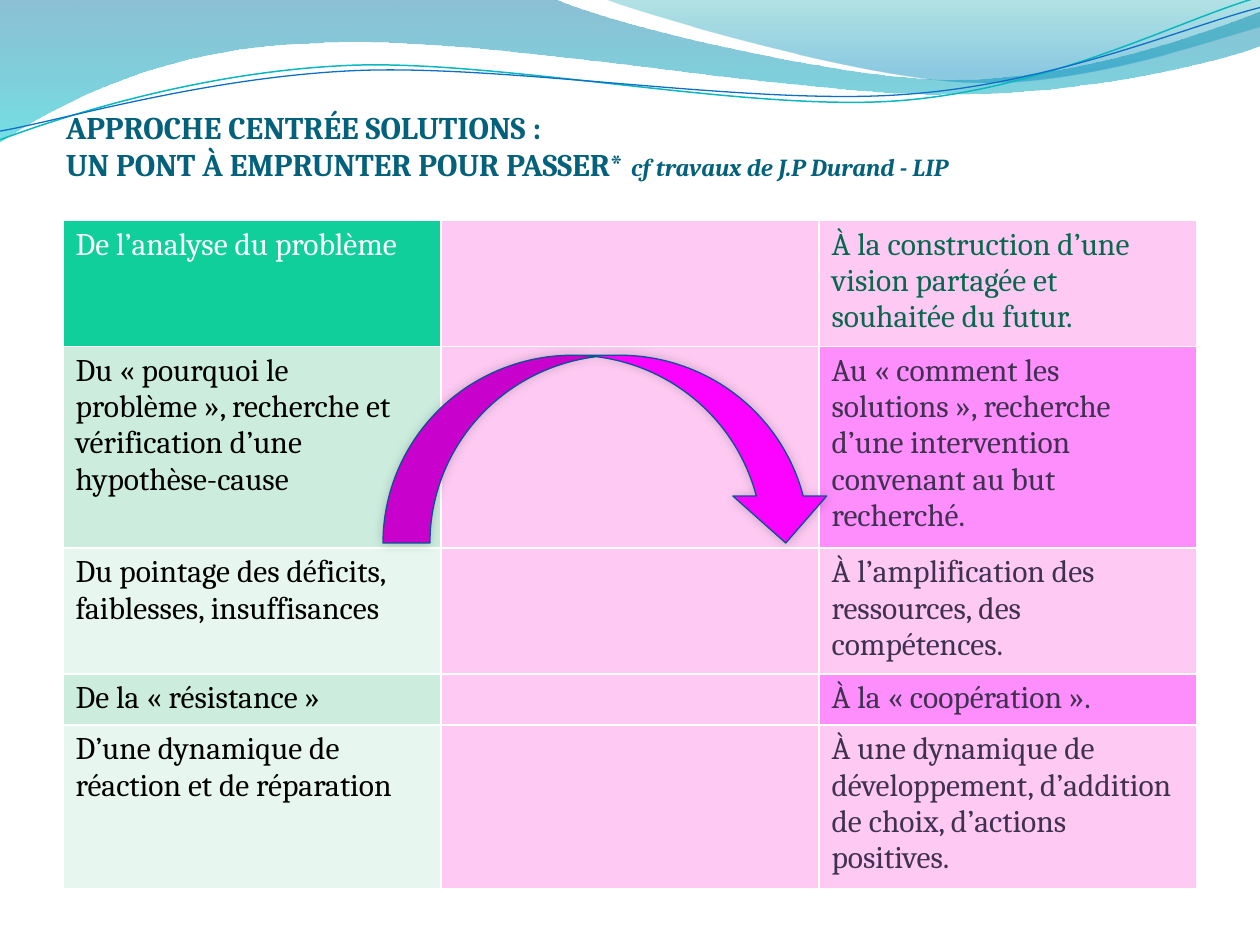
"""Build a slide comparing problem analysis with a solution-centred approach."""
import pptx
import pptx.util
import pptx.oxml
import pptx.oxml.ns
import pptx.dml.color
import pptx.enum.shapes
import pptx.enum.text

Pt = pptx.util.Pt
FONT = "Cambria"
HARD_SPACE = chr(160)
COLORS = {
    "title": "04617B", "white": "FFFFFF", "black": "000000",
    "green": "10CF9B", "mint": "CCEDDE", "pale mint": "E7F6EF",
    "pink": "FECAF3", "orchid": "FD8EFB", "dark green": "08684E",
    "plum": "403152", "arrow": "FC02FF", "arrow line": "095295",
    "teal line": "0AB8BF", "blue line": "0F6FC6",
    "deep blue": "0074A1", "cyan": "00C6CF", "sea": "00A1A9", "sky": "008BBF",
}
TITLE_LINES = [
    [("APPROCHE CENTRÉE SOLUTIONS : ", 18, False)],
    [("UN PONT À EMPRUNTER POUR PASSER* ", 18, False),
     ("cf travaux de J.P Durand - LIP", 14, True)],
]
ROWS = [
    (72, ("De l’analyse du problème", "white", "green"),
     ("À la construction d’une vision partagée et souhaitée du futur.", "dark green", "pink")),
    (115.2, ("Du « pourquoi le problème », recherche et vérification d’une hypothèse-cause", "black", "mint"),
     ("Au « comment les solutions », recherche d’une intervention convenant au but recherché.", "plum", "orchid")),
    (72, ("Du pointage des déficits, faiblesses, insuffisances", "black", "pale mint"),
     ("À l’amplification des ressources, des compétences.", "plum", "pink")),
    (29.2, ("De la « résistance »", "black", "mint"),
     ("À la « coopération ».", "plum", "orchid")),
    (93.6, ("D’une dynamique de réaction et de réparation", "black", "pale mint"),
     ("À une dynamique de développement, d’addition de choix, d’actions positives.", "plum", "pink")),
]
COLUMN_WIDTH = 216
BANDS = [
    ([[(0, 0)], [(316.8, -0.7)],
      [(342.7, 12.2), (478.1, 45.4), (545.8, 45.4)],
      [(614.2, 45.4), (689.8, 18.7), (720, 6.5)], [(720.7, 25.9)],
      [(707.8, 31.7), (626.4, 54.7), (537.1, 54)],
      [(447.8, 54), (275, 20.2), (185, 24.5)],
      [(92.9, 25.9), (33.1, 59.8), (-0.7, 81.4)], [(0, 0)]],
     [(0, "deep blue", 45), (100, "cyan", 55)]),
    ([[(344.9, -0.7)], [(366.5, 7.9), (491, 44.6), (553.7, 46.8)],
      [(616.3, 49.7), (691.9, 23), (720, 15.1)], [(720, 0)], [(344.9, -0.7)]],
     [(0, "sea", 30), (80, "sky", 45)]),
]
STRANDS = [
    ([[(0, 79.9)], [(34.6, 67), (113.8, 41), (199.4, 37.4)],
      [(284.4, 33.8), (427, 64.1), (513.4, 57.6)],
      [(599.8, 51.1), (675.4, 10.8), (718.6, -1.4)]], "teal line", 0.85),
    ([[(0, 74.9)], [(33.8, 69.1), (118.1, 43.9), (203.8, 40.3)],
      [(290.2, 36.7), (429.8, 60.5), (516.2, 54)],
      [(601.9, 48.2), (677.5, 15.1), (720, 4.3)]], "blue line", 0.75),
]
NAMESPACE = pptx.oxml.ns.nsdecls("a")


def rgb(name):
    return pptx.dml.color.RGBColor.from_string(COLORS[name])


def add_run(paragraph, text, size, color, bold=False, italic=False):
    run = paragraph.add_run()
    run.text = text
    run.font.name, run.font.size = FONT, Pt(size)
    run.font.bold, run.font.italic = bold, italic
    run.font.color.rgb = rgb(color)


def add_curve(slide, segments, close):
    points = [(Pt(x), Pt(y)) for segment in segments for x, y in segment]
    builder = slide.shapes.build_freeform(*points[0])
    builder.add_line_segments(points[1:], close=close)
    shape = builder.convert_to_shape()
    shape.shadow.inherit = False
    lines = iter(list(shape.element.spPr.iter(pptx.oxml.ns.qn("a:lnTo"))))
    for segment in segments[1:]:
        parts = [next(lines) for point in segment]
        if len(parts) == 3:
            curve = pptx.oxml.parse_xml(f"<a:cubicBezTo {NAMESPACE}/>")
            parts[0].addprevious(curve)
            for part in parts:
                curve.append(part[0])
                part.getparent().remove(part)
    return shape


def add_band(slide, segments, stops):
    shape = add_curve(slide, segments, True)
    shape.line.fill.background()
    stop_xml = "".join(
        f'<a:gs pos="{position * 1000}"><a:srgbClr val="{COLORS[color]}">'
        f'<a:alpha val="{opacity * 1000}"/></a:srgbClr></a:gs>' for position, color, opacity in stops)
    gradient = pptx.oxml.parse_xml(
        f'<a:gradFill {NAMESPACE} rotWithShape="1"><a:gsLst>{stop_xml}</a:gsLst>'
        '<a:lin ang="5400000" scaled="0"/></a:gradFill>')
    shape.element.spPr.find(pptx.oxml.ns.qn("a:custGeom")).addnext(gradient)


def add_strand(slide, segments, color, width):
    shape = add_curve(slide, segments, False)
    shape.fill.background()
    shape.line.color.rgb, shape.line.width = rgb(color), Pt(width)


def format_title(slide):
    title = slide.shapes.title
    title.left, title.top, title.width, title.height = Pt(37.6), Pt(65.8), Pt(648), Pt(38.88)
    frame = title.text_frame
    frame.word_wrap, frame.auto_size = True, pptx.enum.text.MSO_AUTO_SIZE.NONE
    frame.vertical_anchor = pptx.enum.text.MSO_ANCHOR.BOTTOM
    frame.margin_left = frame.margin_right = frame.margin_bottom = 0
    frame.margin_top = Pt(3.6)
    paragraph = frame.paragraphs[0]
    paragraph.alignment = pptx.enum.text.PP_ALIGN.LEFT
    for index, line in enumerate(TITLE_LINES):
        if index:
            paragraph.add_line_break()
        for text, size, italic in line:
            add_run(paragraph, text, size, "title", True, italic)
    title.element.getparent().append(title.element)


def bind_quotes(text):
    plain = text.replace(HARD_SPACE, " ")
    return plain.replace("« ", "«" + HARD_SPACE).replace(" »", HARD_SPACE + "»")


def fill_cell(cell, text, color, fill):
    if text:
        add_run(cell.text_frame.paragraphs[0], bind_quotes(text), 18, color)
    cell.fill.solid()
    cell.fill.fore_color.rgb = rgb(fill)
    properties = cell._tc.get_or_add_tcPr()
    for index, side in enumerate(("lnL", "lnR", "lnT", "lnB")):
        properties.insert(index, pptx.oxml.parse_xml(
            f'<a:{side} {NAMESPACE} w="{Pt(1)}"><a:solidFill>'
            f'<a:srgbClr val="{COLORS["white"]}"/></a:solidFill></a:{side}>'))


def add_comparison(slide):
    height = sum(row[0] for row in ROWS)
    table = slide.shapes.add_table(len(ROWS), 3, Pt(36), Pt(126), Pt(3 * COLUMN_WIDTH), Pt(height)).table
    table.first_row = table.horz_banding = False
    for column in table.columns:
        column.width = Pt(COLUMN_WIDTH)
    for index, (row_height, before, after) in enumerate(ROWS):
        table.rows[index].height = Pt(row_height)
        for column, content in enumerate((before, ("", "black", "pink"), after)):
            fill_cell(table.cell(index, column), *content)


def add_bridge(slide):
    arrow = slide.shapes.add_shape(pptx.enum.shapes.MSO_SHAPE.CURVED_DOWN_ARROW,
                                   Pt(218.9), Pt(203), Pt(257), Pt(107.3))
    arrow.shadow.inherit = False
    arrow.fill.solid()
    arrow.fill.fore_color.rgb = rgb("arrow")
    arrow.line.color.rgb, arrow.line.width = rgb("arrow line"), Pt(0.75)
    arrow.element.spPr.find(pptx.oxml.ns.qn("a:effectLst")).append(pptx.oxml.parse_xml(
        f'<a:outerShdw {NAMESPACE} blurRad="{Pt(6)}" dist="0" dir="18900000" rotWithShape="0">'
        f'<a:srgbClr val="{COLORS["black"]}"><a:alpha val="20000"/></a:srgbClr></a:outerShdw>'))


def main():
    presentation = pptx.Presentation()
    presentation.slide_width, presentation.slide_height = Pt(720), Pt(540)
    slide = presentation.slides.add_slide(presentation.slide_layouts[5])
    for band in BANDS:
        add_band(slide, *band)
    for strand in STRANDS:
        add_strand(slide, *strand)
    format_title(slide)
    add_comparison(slide)
    add_bridge(slide)
    presentation.save("out.pptx")


if __name__ == "__main__":
    main()
